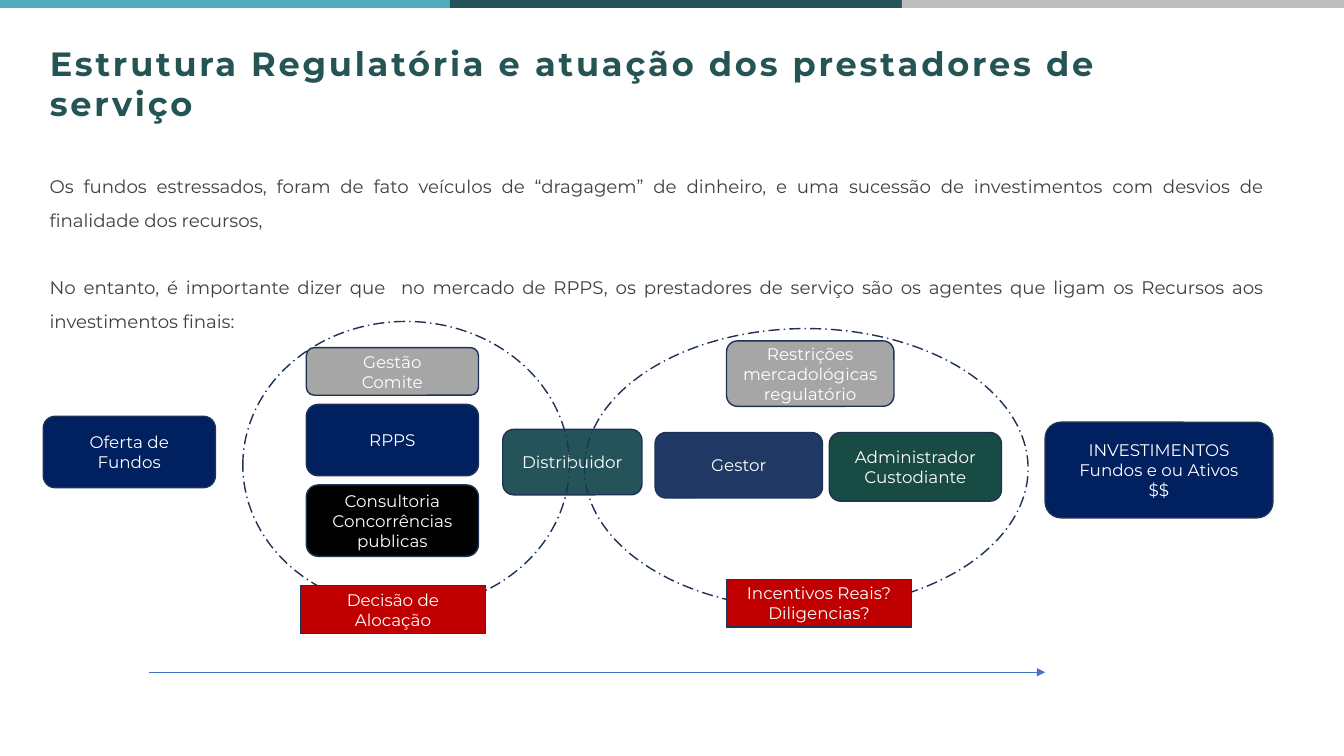
from dataclasses import dataclass

from lxml.etree import SubElement
from pptx import Presentation
from pptx.dml.color import RGBColor
from pptx.enum.dml import MSO_LINE
from pptx.enum.shapes import MSO_CONNECTOR, MSO_SHAPE
from pptx.enum.text import MSO_ANCHOR, MSO_AUTO_SIZE, PP_ALIGN
from pptx.oxml.ns import qn
from pptx.util import Cm, Pt


@dataclass(frozen=True)
class Theme:
    font: str = "Montserrat"
    title_size: int = 24
    body_size: int = 13
    node_size: int = 12
    title: str = "255454"
    body: str = "404040"
    white: str = "FFFFFF"
    outline: str = "1E3256"
    arrow: str = "4472C4"
    sky: str = "4EACBD"
    teal: str = "25535A"
    silver: str = "BCBEC0"
    navy: str = "002060"
    blue: str = "203864"
    green: str = "194B45"
    black: str = "000000"
    gray: str = "A6A6A6"
    red: str = "C00000"


@dataclass(frozen=True)
class Box:
    """A rectangle in centimetres."""
    left: float
    top: float
    width: float
    height: float

    def inner(self, dx, dy, width, height):
        return Box(self.left + dx, self.top + dy, width, height)

    def lengths(self):
        return Cm(self.left), Cm(self.top), Cm(self.width), Cm(self.height)


THEME = Theme()


def rgb(color):
    return RGBColor.from_string(color)


def add_run(paragraph, text, size, color, bold=False):
    run = paragraph.add_run()
    run.text = text
    run.font.name = THEME.font
    run.font.size = Pt(size)
    run.font.color.rgb = rgb(color)
    run.font.bold = bold
    return run


def paragraphs(frame, count):
    """Yield the first paragraph of the frame, then new ones up to count."""
    yield frame.paragraphs[0]
    for _ in range(count - 1):
        yield frame.add_paragraph()


def add_flat_shape(slide, kind, box, fill=None, outline=None):
    shape = slide.shapes.add_shape(kind, *box.lengths())
    shape.shadow.inherit = False
    if fill:
        shape.fill.solid()
        shape.fill.fore_color.rgb = rgb(fill)
    else:
        shape.fill.background()
    if outline:
        shape.line.color.rgb = rgb(outline)
        shape.line.width = Pt(1)
    else:
        shape.line.fill.background()
    return shape


def add_node(slide, box, fill, *lines, kind=MSO_SHAPE.ROUNDED_RECTANGLE):
    frame = add_flat_shape(slide, kind, box, fill, THEME.outline).text_frame
    frame.word_wrap = True
    frame.vertical_anchor = MSO_ANCHOR.MIDDLE
    for paragraph, line in zip(paragraphs(frame, len(lines)), lines):
        paragraph.alignment = PP_ALIGN.CENTER
        add_run(paragraph, line, THEME.node_size, THEME.white)


def add_dashed_ellipse(slide, box):
    ellipse = add_flat_shape(slide, MSO_SHAPE.OVAL, box, outline=THEME.outline)
    ellipse.line.dash_style = MSO_LINE.LONG_DASH_DOT


def add_top_band(slide, box):
    colors = (THEME.sky, THEME.teal, THEME.silver)
    width = box.width / len(colors)
    for i, color in enumerate(colors):
        segment = box.inner(i * width, 0, width, box.height)
        add_flat_shape(slide, MSO_SHAPE.RECTANGLE, segment, color)


def add_title(slide, box):
    title = slide.shapes.title
    title.left, title.top, title.width, title.height = box.lengths()
    frame = title.text_frame
    frame.auto_size = MSO_AUTO_SIZE.NONE
    frame.word_wrap = True
    frame.vertical_anchor = MSO_ANCHOR.TOP
    paragraph = frame.paragraphs[0]
    paragraph.alignment = PP_ALIGN.LEFT
    run = add_run(paragraph, "Estrutura Regulatória e atuação dos prestadores de serviço",
                  THEME.title_size, THEME.title, bold=True)
    run.font._element.set("spc", "200")


def add_introduction(slide, box):
    texts = (
        "Os fundos estressados, foram de fato veículos de “dragagem” de dinheiro, "
        "e uma sucessão de investimentos com desvios de finalidade dos recursos,",
        "No entanto, é importante dizer que  no mercado de RPPS, os prestadores de "
        "serviço são os agentes que ligam os Recursos aos investimentos finais:",
    )
    frame = slide.shapes.add_textbox(*box.lengths()).text_frame
    frame.word_wrap = True
    for i, (paragraph, text) in enumerate(zip(paragraphs(frame, len(texts)), texts)):
        paragraph.alignment = PP_ALIGN.JUSTIFY
        paragraph.line_spacing = Pt(24)
        paragraph.space_before = Pt(24 * i)
        add_run(paragraph, text, THEME.body_size, THEME.body)


def add_allocation_group(slide, box):
    add_dashed_ellipse(slide, box)
    stack = (
        (1.2, THEME.gray, ("Gestão", "Comite")),
        (1.8, THEME.navy, ("RPPS",)),
        (1.8, THEME.black, ("Consultoria", "Concorrências publicas")),
    )
    gap, top = 0.23, 0.66
    for height, fill, lines in stack:
        add_node(slide, box.inner(1.6, top, 4.34, height), fill, *lines)
        top += height + gap
    add_node(slide, box.inner(1.45, 6.66, 4.67, 1.2), THEME.red,
             "Decisão de Alocação", kind=MSO_SHAPE.RECTANGLE)


def add_provider_group(slide, box):
    add_dashed_ellipse(slide, box)
    add_node(slide, box.inner(3.58, 0.31, 4.22, 1.65), THEME.gray,
             "Restrições mercadológicas", "regulatório")
    add_node(slide, box.inner(1.78, 2.62, 4.22, 1.65), THEME.blue, "Gestor")
    add_node(slide, box.inner(6.17, 2.62, 4.34, 1.73), THEME.green,
             "Administrador", "Custodiante")
    add_node(slide, box.inner(3.58, 6.32, 4.67, 1.2), THEME.red,
             "Incentivos Reais?", "Diligencias?", kind=MSO_SHAPE.RECTANGLE)


def add_flow_arrow(slide, box):
    left, top, width, _ = box.lengths()
    arrow = slide.shapes.add_connector(MSO_CONNECTOR.STRAIGHT, left, top, left + width, top)
    arrow.line.color.rgb = rgb(THEME.arrow)
    arrow.line.width = Pt(0.5)
    SubElement(arrow.line._get_or_add_ln(), qn("a:tailEnd"), type="triangle")
    SubElement(arrow._element.spPr, qn("a:effectLst"))


def add_flow_diagram(slide, box):
    add_node(slide, box.inner(0, 2.39, 4.34, 1.8), THEME.navy, "Oferta de Fundos")
    add_node(slide, box.inner(11.58, 2.72, 3.51, 1.65), THEME.teal, "Distribuidor")
    add_node(slide, box.inner(25.25, 2.54, 5.74, 2.41), THEME.navy,
             "INVESTIMENTOS", "Fundos e ou Ativos", "$$")
    add_allocation_group(slide, box.inner(5.03, 0, 8.23, 7.24))
    add_provider_group(slide, box.inner(13.64, 0.18, 11.18, 7.06))
    add_flow_arrow(slide, box.inner(2.67, 8.84, 22.58, 0))


def main():
    deck = Presentation()
    deck.slide_width, deck.slide_height = Cm(33.87), Cm(19.05)
    slide = deck.slides.add_slide(deck.slide_layouts[5])
    add_introduction(slide, Box(1, 4, 31.06, 4.42))
    add_top_band(slide, Box(-0.07, -0.07, 34.2, 0.27))
    add_title(slide, Box(1, 0.95, 29.95, 2.31))
    add_flow_diagram(slide, Box(1.09, 8.1, 30.99, 8.84))
    deck.save("out.pptx")


if __name__ == "__main__":
    main()
